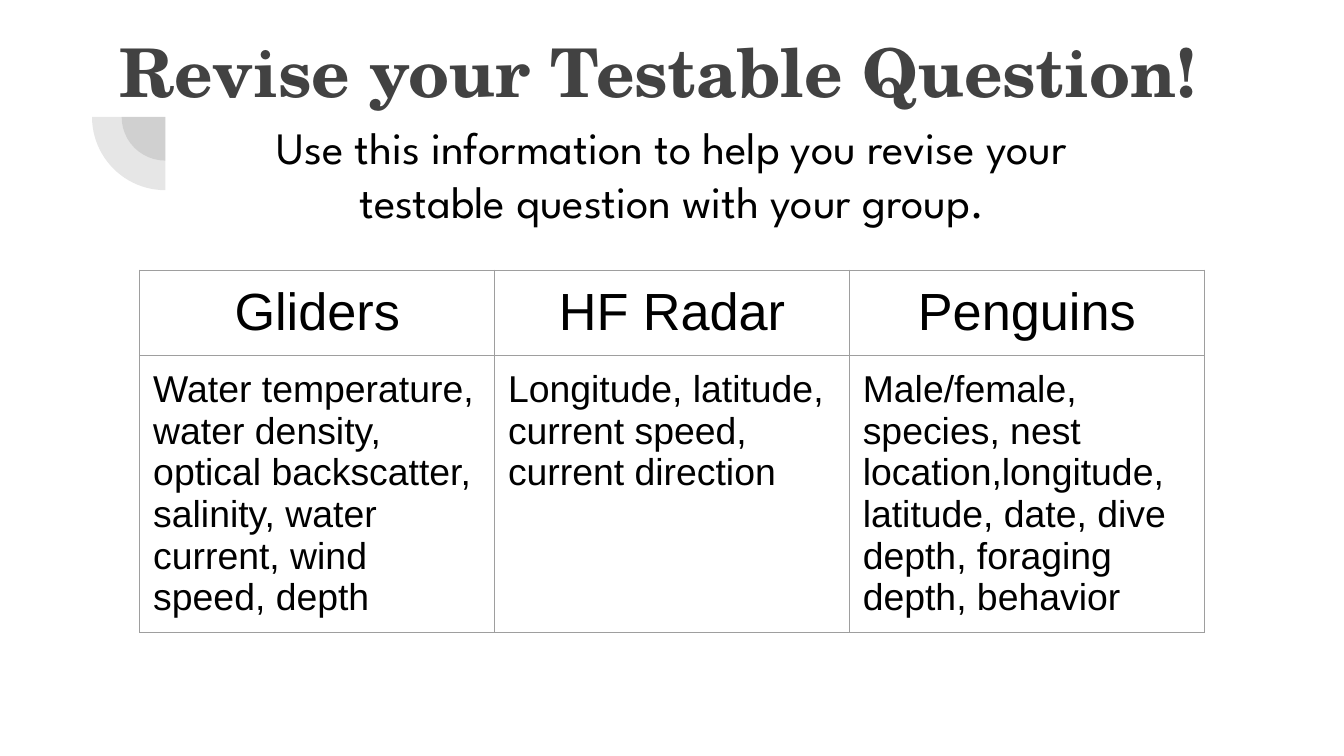
from dataclasses import dataclass

import lxml.etree
import pptx
import pptx.dml.color
import pptx.enum.shapes
import pptx.enum.text
import pptx.oxml.ns
import pptx.util

Inches = pptx.util.Inches
Align = pptx.enum.text.PP_ALIGN


@dataclass(frozen=True)
class TextStyle:
    font: str
    size: int
    color: str
    bold: bool = False
    align: Align = Align.CENTER


@dataclass(frozen=True)
class Theme:
    title: TextStyle = TextStyle("TeX Gyre Schola", 36, "424242", bold=True)
    prompt: TextStyle = TextStyle("League Spartan", 24, "000000")
    heading: TextStyle = TextStyle("Arial", 28, "000000")
    body: TextStyle = TextStyle("Arial", 20, "000000", align=Align.LEFT)
    arc: str = "424242"
    arc_alpha: int = 13
    border: str = "9E9E9E"
    border_width: float = 0.75
    inset: float = 0.1


@dataclass(frozen=True)
class DataSource:
    name: str
    variables: str


THEME = Theme()
SOURCES = [
    DataSource("Gliders", "Water temperature, water density, optical backscatter, "
               "salinity, water current, wind speed, depth"),
    DataSource("HF Radar", "Longitude, latitude, current speed, current direction"),
    DataSource("Penguins", "Male/female, species, nest location,longitude, latitude, "
               "date, dive depth, foraging depth, behavior"),
]
ARC_CENTER = (1.23, 0.87)
ARC_DIAMETERS = (0.65, 1.09)
COLUMN_WIDTH = 2.64
ROW_HEIGHTS = (0.63, 2.06)


def rgb(color: str) -> pptx.dml.color.RGBColor:
    return pptx.dml.color.RGBColor.from_string(color)


def write(frame: pptx.text.text.TextFrame, text: str, style: TextStyle) -> None:
    paragraph = frame.paragraphs[0]
    paragraph.alignment = style.align
    run = paragraph.add_run()
    run.text = text
    run.font.name = style.font
    run.font.size = pptx.util.Pt(style.size)
    run.font.bold = style.bold
    run.font.color.rgb = rgb(style.color)


def set_insets(holder) -> None:
    """Apply the common inset to a text frame or a table cell."""
    for side in ("left", "top", "right", "bottom"):
        setattr(holder, f"margin_{side}", Inches(THEME.inset))


def prepare_frame(frame: pptx.text.text.TextFrame, anchor: pptx.enum.text.MSO_ANCHOR) -> None:
    set_insets(frame)
    frame.word_wrap = True
    frame.auto_size = pptx.enum.text.MSO_AUTO_SIZE.NONE
    frame.vertical_anchor = anchor


def draw_arc(slide: pptx.slide.Slide, diameter: float) -> None:
    x, y = (Inches(center - diameter / 2) for center in ARC_CENTER)
    arc = slide.shapes.add_shape(pptx.enum.shapes.MSO_SHAPE.PIE, x, y,
                                 Inches(diameter), Inches(diameter))
    arc.adjustments[0], arc.adjustments[1] = 108, 162
    arc.rotation = 270
    arc.shadow.inherit = False
    arc.line.fill.background()
    arc.fill.solid()
    arc.fill.fore_color.rgb = rgb(THEME.arc)
    color = arc.element.find(".//" + pptx.oxml.ns.qn("a:srgbClr"))
    lxml.etree.SubElement(color, pptx.oxml.ns.qn("a:alpha"), val=str(THEME.arc_alpha * 1000))


def add_borders(cell: pptx.table._Cell) -> None:
    qn = pptx.oxml.ns.qn
    properties = cell._tc.get_or_add_tcPr()
    for side in "LRTB":
        line = lxml.etree.SubElement(properties, qn(f"a:ln{side}"),
                                     w=str(pptx.util.Pt(THEME.border_width)))
        fill = lxml.etree.SubElement(line, qn("a:solidFill"))
        lxml.etree.SubElement(fill, qn("a:srgbClr"), val=THEME.border)


def fill_cell(cell: pptx.table._Cell, text: str, style: TextStyle) -> None:
    add_borders(cell)
    cell.fill.background()
    set_insets(cell)
    write(cell.text_frame, text, style)


def draw_sources(slide: pptx.slide.Slide) -> None:
    table = slide.shapes.add_table(
        2, len(SOURCES), Inches(1.04), Inches(2.01),
        Inches(COLUMN_WIDTH * len(SOURCES)), Inches(sum(ROW_HEIGHTS))).table
    table.first_row = table.horz_banding = False
    for row, height in zip(table.rows, ROW_HEIGHTS):
        row.height = Inches(height)
    for column, source in enumerate(SOURCES):
        table.columns[column].width = Inches(COLUMN_WIDTH)
        fill_cell(table.cell(0, column), source.name, THEME.heading)
        fill_cell(table.cell(1, column), source.variables, THEME.body)


def main() -> None:
    # Widescreen 16:9 slide
    deck = pptx.Presentation()
    deck.slide_width = Inches(10)
    deck.slide_height = deck.slide_width * 9 // 16
    slide = deck.slides.add_slide(deck.slide_layouts[5])

    # Quarter-circle ornament behind the text
    for diameter in ARC_DIAMETERS:
        draw_arc(slide, diameter)

    # Title, brought in front of the ornament
    title = slide.shapes.title
    title.element.getparent().append(title.element)
    title.left, title.top = Inches(0.59), Inches(0.11)
    title.width, title.height = Inches(8.61), Inches(0.83)
    prepare_frame(title.text_frame, pptx.enum.text.MSO_ANCHOR.MIDDLE)
    write(title.text_frame, "Revise your Testable Question!", THEME.title)

    # Prompt for the groups
    prompt = slide.shapes.add_textbox(Inches(1.62), Inches(0.79), Inches(6.76), Inches(0.96))
    prepare_frame(prompt.text_frame, pptx.enum.text.MSO_ANCHOR.TOP)
    write(prompt.text_frame, "Use this information to help you revise your "
          "testable question with your group.", THEME.prompt)

    # Variables offered by each data source
    draw_sources(slide)
    deck.save("out.pptx")


if __name__ == "__main__":
    main()
